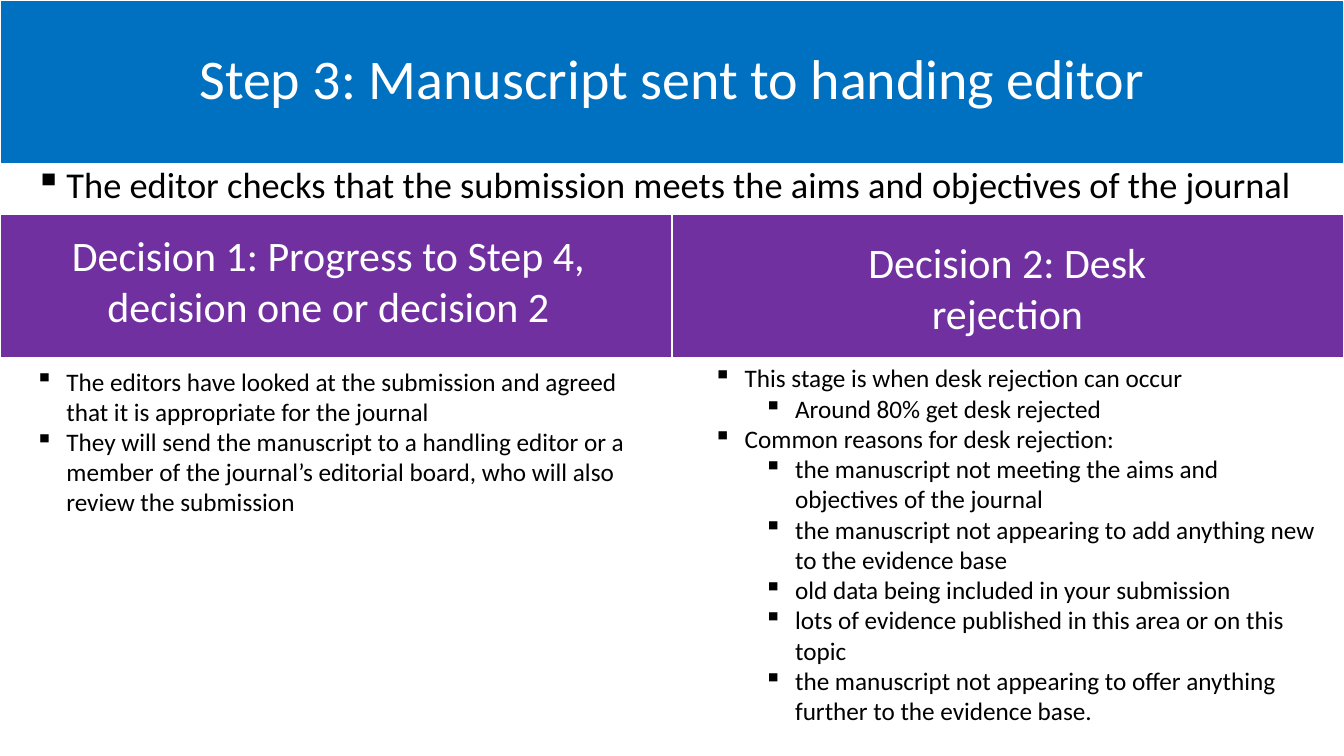
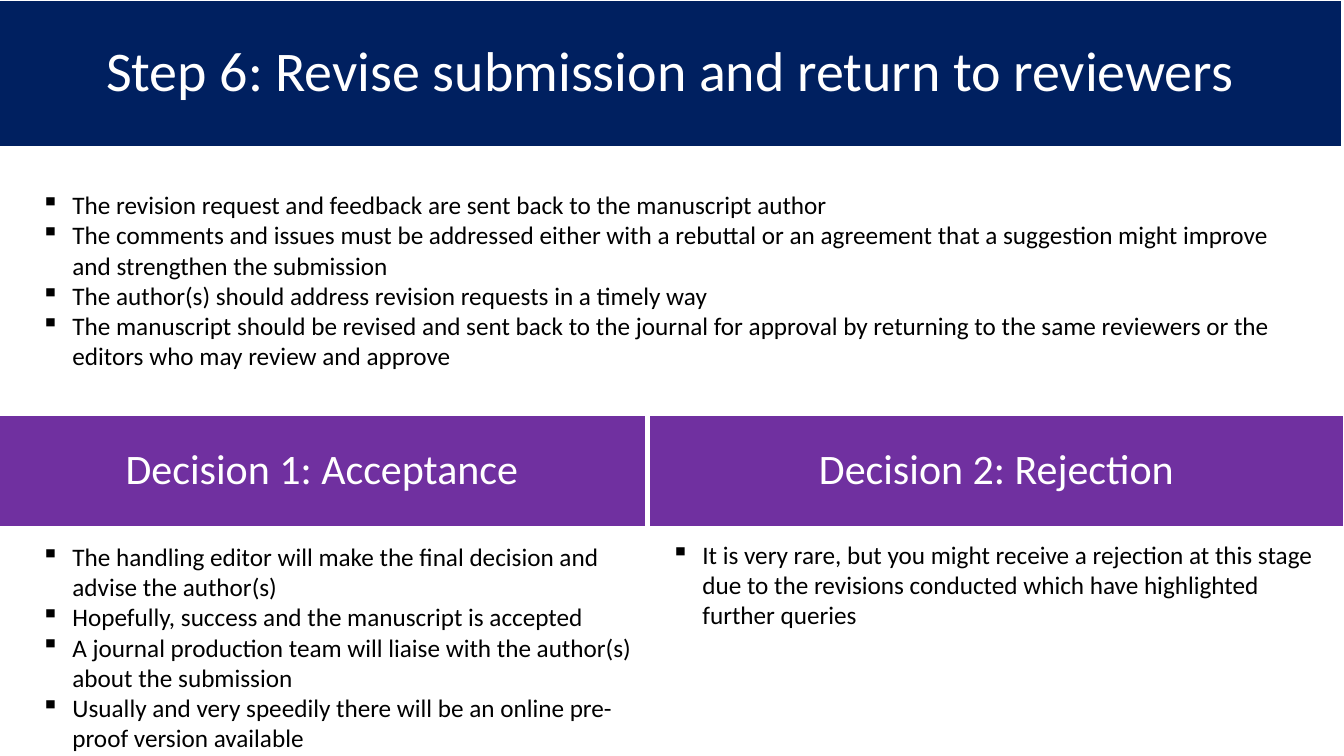
from dataclasses import dataclass

from lxml import etree
from pptx import Presentation, util as u
from pptx.dml.color import RGBColor
from pptx.enum import shapes, text
from pptx.oxml import ns


@dataclass(frozen=True)
class Theme:
    font: str = "Calibri"
    white: str = "FFFFFF"
    ink: str = "000000"
    blue: str = "0070C0"
    navy: str = "002060"
    purple: str = "7030A0"
    title: int = 40
    heading: int = 30
    lead: int = 26
    body: int = 18
    bullet: str = "▪"
    hang: float = 0.31
    step: float = 0.5


THEME = Theme()
WIDTH, HEIGHT = u.Inches(13.333), u.Inches(7.5)
CENTRE = {"alignment": text.PP_ALIGN.CENTER}
BAND_PARA = {**CENTRE, "line_spacing": 0.9}
BAND_FRAME = {
    "word_wrap": True,
    "vertical_anchor": text.MSO_ANCHOR.MIDDLE,
    **{f"margin_{side}": u.Inches(0.01) for side in ("left", "top", "right", "bottom")},
}
BOX_FRAME = {"word_wrap": True, "vertical_anchor": text.MSO_ANCHOR.TOP}


def apply(target, formats):
    for name, value in formats.items():
        setattr(target, name, value)


def place(left, top, width, height):
    shares = ((left, WIDTH), (top, HEIGHT), (width, WIDTH), (height, HEIGHT))
    return [round(share / 100 * whole) for share, whole in shares]


def add_text(para, words, size, color, formats):
    apply(para, formats)
    span = para.add_run()
    span.text = words
    apply(span.font, {"name": THEME.font, "size": u.Pt(size)})
    span.font.color.rgb = RGBColor.from_string(color)


def add_bullet(para):
    properties = para._p.get_or_add_pPr()
    indent = THEME.hang + THEME.step * para.level
    properties.set("marL", str(u.Inches(indent)))
    properties.set("indent", str(-u.Inches(THEME.hang)))
    etree.SubElement(properties, ns.qn("a:buChar"), char=THEME.bullet)


def add_band(page, area, color, words="", size=THEME.heading):
    band = page.shapes.add_shape(shapes.MSO_SHAPE.RECTANGLE, *place(*area))
    band.shadow.inherit = False
    band.fill.solid()
    band.fill.fore_color.rgb = RGBColor.from_string(color)
    band.line.color.rgb = RGBColor.from_string(THEME.white)
    band.line.width = u.Pt(1)
    if words:
        apply(band.text_frame, BAND_FRAME)
        add_text(band.text_frame.paragraphs[0], words, size, THEME.white, BAND_PARA)


def add_box(page, area):
    box = page.shapes.add_textbox(*place(*area))
    apply(box.text_frame, BOX_FRAME)
    return box.text_frame


def add_label(page, area, words):
    frame = add_box(page, area)
    add_text(frame.paragraphs[0], words, THEME.heading, THEME.white, CENTRE)


def add_list(page, area, items, size=THEME.body):
    frame = add_box(page, area)
    for number, (level, words) in enumerate(items):
        para = frame.add_paragraph() if number else frame.paragraphs[0]
        add_text(para, words, size, THEME.ink, {"level": level})
        add_bullet(para)


def build_editor_step(page):
    add_band(page, (0, 0, 100, 21.6), THEME.blue,
             "Step 3: Manuscript sent to handing editor", THEME.title)
    for column in range(2):
        add_band(page, (50 * column, 28.4, 50, 18.93), THEME.purple)
    add_label(page, (0, 29.73, 48.9, 14.8),
              "Decision 1: Progress to Step 4, decision one or decision 2")
    add_label(page, (58.65, 30.67, 32.63, 14.8), "Decision 2: Desk rejection")
    add_list(page, (1.88, 20.8, 97.05, 7.2), [
        (0, "The editor checks that the submission meets the aims and objectives of the journal"),
    ], THEME.lead)
    add_list(page, (1.88, 47.73, 47.03, 21.6), [
        (0, "The editors have looked at the submission and agreed that it is appropriate for the journal"),
        (0, "They will send the manuscript to a handling editor or a member of the journal’s "
            "editorial board, who will also review the submission"),
    ])
    add_list(page, (52.35, 47.33, 46.65, 49.87), [
        (0, "This stage is when desk rejection can occur"),
        (1, "Around 80% get desk rejected"),
        (0, "Common reasons for desk rejection:"),
        (1, "the manuscript not meeting the aims and objectives of the journal"),
        (1, "the manuscript not appearing to add anything new to the evidence base"),
        (1, "old data being included in your submission"),
        (1, "lots of evidence published in this area or on this topic"),
        (1, "the manuscript not appearing to offer anything further to the evidence base."),
    ])


def build_revision_step(page):
    add_band(page, (-0.15, 0, 100, 19.47), THEME.navy,
             "Step 6: Revise submission and return to reviewers", THEME.title)
    add_band(page, (-0.15, 54.93, 48.23, 14.8), THEME.purple, "Decision 1: Acceptance")
    add_band(page, (48.3, 54.93, 51.7, 14.8), THEME.purple, "Decision 2: Rejection")
    add_list(page, (2.33, 24.4, 95.33, 25.6), [
        (0, "The revision request and feedback are sent back to the manuscript author"),
        (0, "The comments and issues must be addressed either with a rebuttal or an agreement "
            "that a suggestion might improve and strengthen the submission"),
        (0, "The author(s) should address revision requests in a timely way"),
        (0, "The manuscript should be revised and sent back to the journal for approval by "
            "returning to the same reviewers or the editors who may review and approve"),
    ])
    add_list(page, (2.33, 70.93, 45.75, 29.6), [
        (0, "The handling editor will make the final decision and advise the author(s)"),
        (0, "Hopefully, success and the manuscript is accepted"),
        (0, "A journal production team will liaise with the author(s) about the submission"),
        (0, "Usually and very speedily there will be an online pre-proof version available"),
    ])
    add_list(page, (49.2, 70.67, 50.03, 13.47), [
        (0, "It is very rare, but you might receive a rejection at this stage due to the "
            "revisions conducted which have highlighted further queries"),
    ])


def main():
    deck = Presentation()
    apply(deck, {"slide_width": WIDTH, "slide_height": HEIGHT})
    for build in (build_editor_step, build_revision_step):
        build(deck.slides.add_slide(deck.slide_layouts[6]))
    deck.save("out.pptx")


if __name__ == "__main__":
    main()
